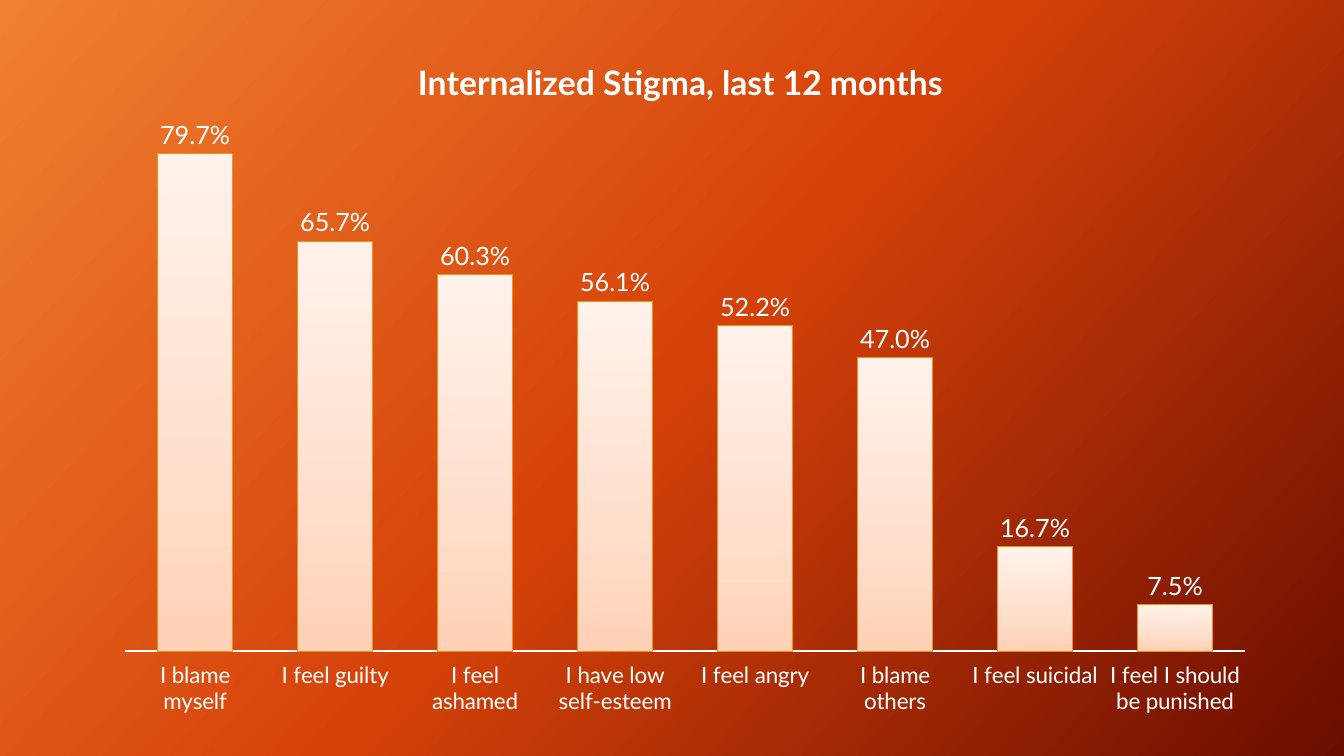
from lxml.etree import SubElement
from pptx import Presentation
from pptx.chart.data import CategoryChartData
from pptx.dml.color import RGBColor
from pptx.enum.chart import XL_CHART_TYPE, XL_LABEL_POSITION, XL_TICK_LABEL_POSITION, XL_TICK_MARK
from pptx.oxml import parse_xml
from pptx.oxml.ns import nsdecls, qn
from pptx.util import Pt

EMU_PER_PX = 914400 / 100.8
COLORS = {
    "text": "FFFFFF",
    "bar_line": "F0920F",
    "background_start": "F18031",
    "background_middle": "D54209",
    "background_end": "6A0D00",
    "bar_bottom": "FFD1B6",
    "bar_middle": "FFDECB",
    "bar_top": "FFF2EB",
}
STIGMA_RATES = {
    "I blame myself": 0.797,
    "I feel guilty": 0.657,
    "I feel ashamed": 0.603,
    "I have low self-esteem": 0.561,
    "I feel angry": 0.522,
    "I blame others": 0.47,
    "I feel suicidal": 0.167,
    "I feel I should be punished": 0.075,
}


def px(length):
    return round(length * EMU_PER_PX)


def color(name):
    return RGBColor.from_string(COLORS[name])


def replace_fill_with_gradient(properties, stops, angle):
    """Swap a solid fill for a gradient; the angle runs clockwise in degrees."""
    gradient = parse_xml(f'<a:gradFill rotWithShape="1" {nsdecls("a")}/>')
    stop_list = SubElement(gradient, qn("a:gsLst"))
    for percent, name in stops:
        stop = SubElement(stop_list, qn("a:gs"), pos=str(percent * 1000))
        SubElement(stop, qn("a:srgbClr"), val=COLORS[name])
    SubElement(gradient, qn("a:lin"), ang=str(angle * 60000), scaled="0")
    properties.replace(properties.find(qn("a:solidFill")), gradient)


def set_manual_layout(parent, index, **settings):
    """Place a chart part by fractions of the chart area."""
    for old_layout in parent.findall(qn("c:layout")):
        parent.remove(old_layout)
    layout = parse_xml(f'<c:layout {nsdecls("c")}/>')
    manual = SubElement(layout, qn("c:manualLayout"))
    for tag, value in settings.items():
        SubElement(manual, qn(f"c:{tag}"), val=str(value))
    parent.insert(index, layout)


class SlideBuilder:
    font_name = "Lato"

    def __init__(self, presentation):
        self.slide = presentation.slides.add_slide(presentation.slide_layouts[6])

    def style_font(self, font, size, bold=False):
        font.name = self.font_name
        font.size = Pt(size)
        font.bold = bold
        font.color.rgb = color("text")

    def add_background(self, stops, angle):
        self.slide.background.fill.solid()
        properties = self.slide.element.find(f".//{qn('p:bgPr')}")
        replace_fill_with_gradient(properties, stops, angle)

    def add_column_chart(self, title, rates, left, top, width, height):
        data = CategoryChartData(number_format="0.0%")
        data.categories = rates.keys()
        data.add_series("Series 1", rates.values())
        chart = self.slide.shapes.add_chart(
            XL_CHART_TYPE.COLUMN_CLUSTERED, px(left), px(top), px(width), px(height), data
        ).chart
        chart.has_legend = False
        self.style_font(chart.font, 18)
        self.style_title(chart, title)
        self.style_axes(chart)
        self.style_columns(chart)

    def style_title(self, chart, title):
        chart.has_title = True
        text_frame = chart.chart_title.text_frame
        text_frame.text = title
        self.style_font(text_frame.paragraphs[0].font, 24, bold=True)
        set_manual_layout(chart.element.find(f".//{qn('c:title')}"), 1,
                          xMode="edge", yMode="edge", x=0.27, y=0.04)

    def style_axes(self, chart):
        category_axis = chart.category_axis
        category_axis.major_tick_mark = XL_TICK_MARK.NONE
        category_axis.tick_label_position = XL_TICK_LABEL_POSITION.LOW
        self.style_font(category_axis.tick_labels.font, 16)
        category_axis.format.line.color.rgb = color("text")
        category_axis.format.line.width = Pt(1.5)
        value_axis = chart.value_axis
        value_axis.minimum_scale = 0
        value_axis.maximum_scale = 0.9
        value_axis.has_major_gridlines = False
        value_axis.visible = False

    def style_columns(self, chart):
        plot = chart.plots[0]
        plot.gap_width = 86
        plot.vary_by_categories = False
        plot.has_data_labels = True
        labels = plot.data_labels
        labels.show_value = True
        labels.number_format = "0.0%"
        labels.number_format_is_linked = False
        labels.position = XL_LABEL_POSITION.OUTSIDE_END
        self.style_font(labels.font, 18)

        columns = plot.series[0].format
        columns.fill.solid()
        columns.line.color.rgb = color("bar_line")
        columns.line.width = Pt(0.75)
        replace_fill_with_gradient(
            chart.element.find(f".//{qn('c:ser')}/{qn('c:spPr')}"),
            [(0, "bar_bottom"), (35, "bar_middle"), (100, "bar_top")], 270)
        set_manual_layout(chart.element.find(f".//{qn('c:plotArea')}"), 0,
                          layoutTarget="inner", xMode="edge", yMode="edge",
                          x=0.021, y=0.093, w=0.973, h=0.798)


def main():
    presentation = Presentation()
    presentation.slide_width = px(1344)
    presentation.slide_height = px(756)
    builder = SlideBuilder(presentation)
    builder.add_background(
        [(0, "background_start"), (50, "background_middle"), (100, "background_end")], 42)
    builder.add_column_chart("Internalized Stigma, last 12 months", STIGMA_RATES,
                             101, 24, 1151, 704)
    presentation.save("out.pptx")


if __name__ == "__main__":
    main()
